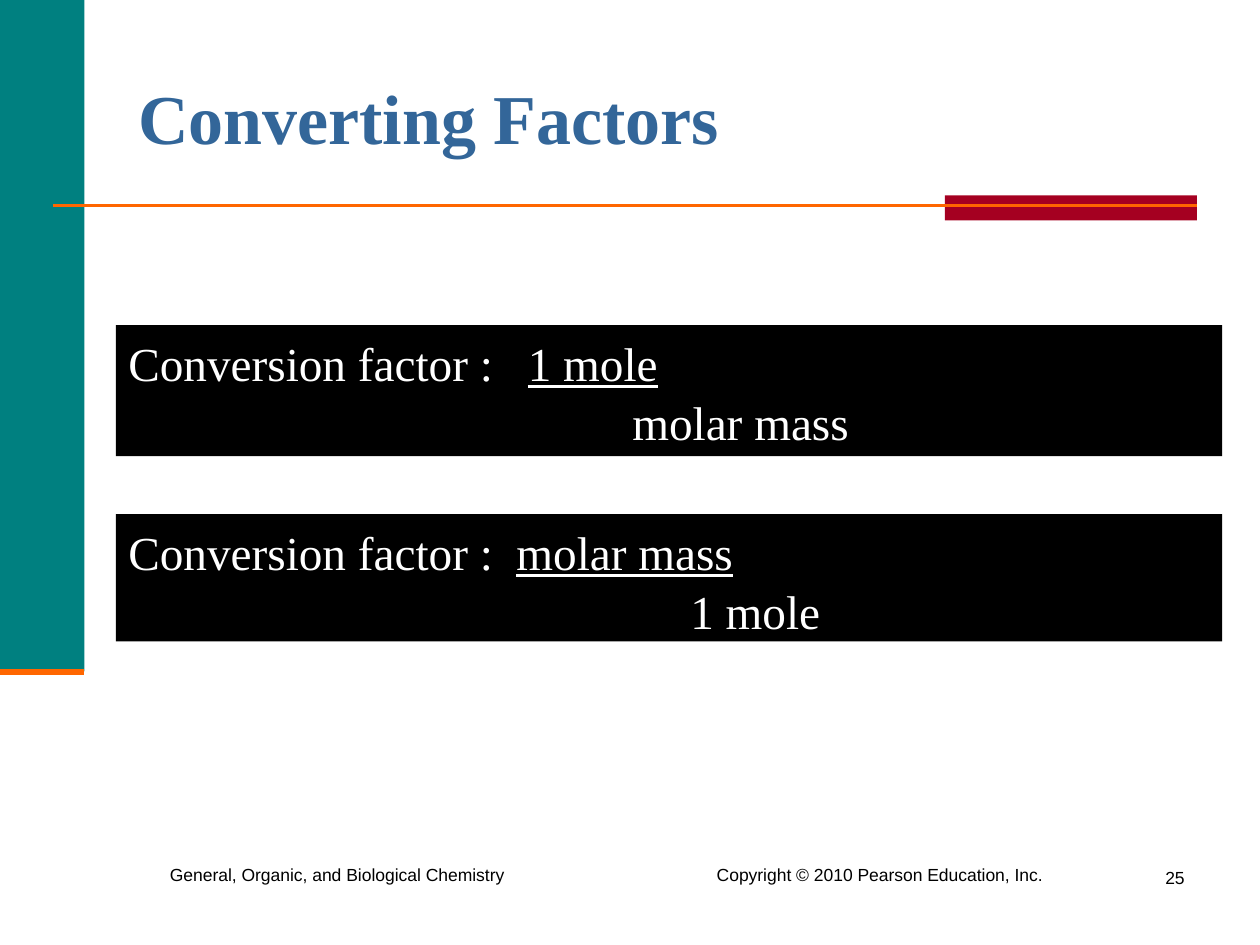
import pptx
import pptx.util
import pptx.dml.color
import pptx.enum.shapes
import pptx.enum.text
import pptx.oxml.ns
from lxml import etree

Inches, Pt = pptx.util.Inches, pptx.util.Pt
ALIGN = pptx.enum.text.PP_ALIGN
qn = pptx.oxml.ns.qn

# Content
COLORS = {"teal": "008080", "red": "A50021", "orange": "FF6600",
          "title": "336699", "black": "000000", "white": "FFFFFF"}
TITLE = "Converting Factors"
FOOTER = "General, Organic, and Biological Chemistry\tCopyright\u00a0© 2010 Pearson Education, Inc."
PAGE = "25"
LABEL = "Conversion factor :"
# top, height, numerator, its tab stops, denominator, its indent
FACTORS = [
    (2.58, 1.04, "1 mole\t", (3.17, 4.48), "molar mass", 4.0),
    (4.08, 1.01, "molar mass", (3.08,), "1 mole", 4.46),
]
BARS = [((0, 0, 0.67, 5.33), "teal"), ((7.5, 1.55, 2, 0.2), "red")]
RULES = [((0.42, 1.63, 9.5, 1.63), 1.5), ((0, 5.33, 0.67, 5.33), 3.5)]


def rgb(name):
    return pptx.dml.color.RGBColor.from_string(COLORS[name])


def add_bar(place, color):
    bar = s.shapes.add_shape(pptx.enum.shapes.MSO_SHAPE.RECTANGLE, *map(Inches, place))
    bar.shadow.inherit = False
    bar.fill.solid()
    bar.fill.fore_color.rgb = rgb(color)
    bar.line.fill.background()
    return bar


def add_rule(ends, width):
    rule = s.shapes.add_connector(pptx.enum.shapes.MSO_CONNECTOR.STRAIGHT, *map(Inches, ends))
    rule.line.color.rgb = rgb("orange")
    rule.line.width = Pt(width)
    etree.SubElement(rule._element.spPr, qn("a:effectLst"))


def set_tabs(p, stops):
    tabs = etree.SubElement(p._p.get_or_add_pPr(), qn("a:tabLst"))
    for stop in stops:
        etree.SubElement(tabs, qn("a:tab"), pos=str(Inches(stop)), algn="l")


def style(r, font, size, color, bold=False):
    r.font.name, r.font.size, r.font.bold = font, Pt(size), bold
    r.font.color.rgb = rgb(color)


def add_text(place, text, font, size, color, bold=False, align=ALIGN.LEFT):
    tf = s.shapes.add_textbox(*map(Inches, place)).text_frame
    tf.word_wrap = True
    tf.text = text
    p = tf.paragraphs[0]
    p.alignment = align
    style(p.runs[0], font, size, color, bold)
    return tf


def add_factor(top, height, numerator, stops, denominator, indent):
    tf = add_bar((0.92, top, 8.78, height), "black").text_frame
    tf.word_wrap = True
    tf.vertical_anchor = pptx.enum.text.MSO_ANCHOR.TOP
    upper, lower = tf.paragraphs[0], tf.add_paragraph()
    set_tabs(upper, stops)
    lower._p.get_or_add_pPr().set("marL", str(Inches(indent)))
    for p, text, underline in ((upper, LABEL + "\t", False), (upper, numerator, True),
                               (lower, denominator, False)):
        p.alignment = ALIGN.LEFT
        p.line_spacing = 1.05
        r = p.add_run()
        r.text = text
        style(r, "Times New Roman", 27, "white")
        r.font.underline = underline


prs = pptx.Presentation()
prs.slide_width, prs.slide_height = Inches(10), Inches(7.5)
s = prs.slides.add_slide(prs.slide_layouts[6])

# Frame
for place, color in BARS:
    add_bar(place, color)
for ends, width in RULES:
    add_rule(ends, width)

# Footer and page number
footer = add_text((1.25, 6.83, 7.5, 0.42), FOOTER, "Arial", 10, "black").paragraphs[0]
set_tabs(footer, (4.34,))
footer.line_spacing = 0.9
add_text((7.42, 6.83, 2.08, 0.5), PAGE, "Arial", 10, "black", align=ALIGN.RIGHT)

# Title and conversion factors
title = add_text((1, 0.3, 8.5, 1.25), TITLE, "Times New Roman", 40, "title", bold=True)
title.vertical_anchor = pptx.enum.text.MSO_ANCHOR.MIDDLE
for factor in FACTORS:
    add_factor(*factor)

prs.save("out.pptx")
